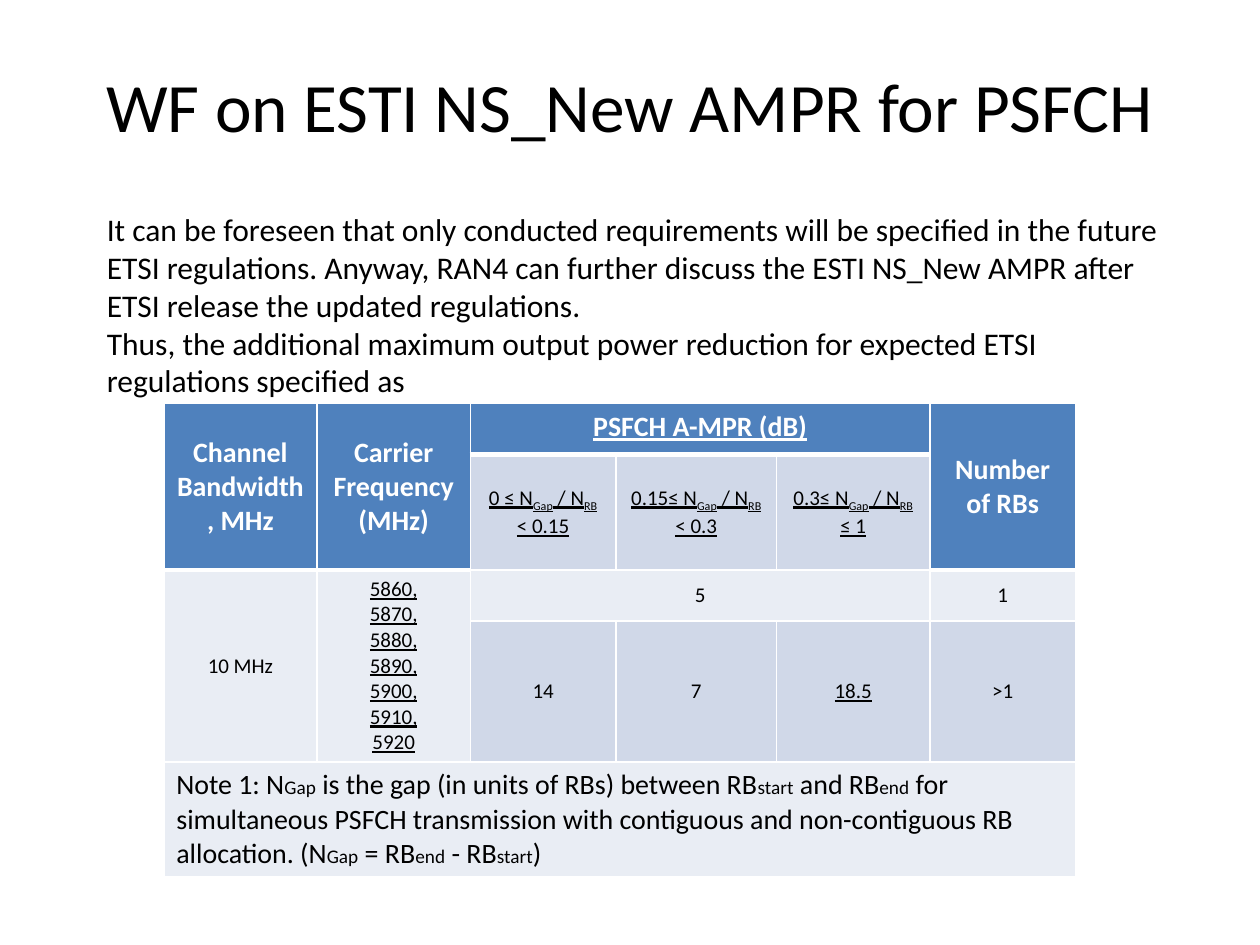
import pptx
import pptx.dml.color
import pptx.enum.text
import pptx.oxml
import pptx.oxml.ns
import pptx.util

Pt = pptx.util.Pt
PP_ALIGN = pptx.enum.text.PP_ALIGN
MIDDLE = pptx.enum.text.MSO_ANCHOR.MIDDLE
TOP = pptx.enum.text.MSO_ANCHOR.TOP
FONT = "Calibri"
COLORS = {
    "text": "000000",
    "white": "FFFFFF",
    "header": "4F81BD",
    "band": "D0D8E8",
    "light": "E9EDF4",
}

TITLE = "WF on ESTI NS_New AMPR for PSFCH"
INTRO = [
    "It can be foreseen that only conducted requirements will be specified in the future "
    "ETSI regulations. Anyway, RAN4 can further discuss the ESTI NS_New AMPR after "
    "ETSI release the updated regulations.",
    "Thus, the additional maximum output power reduction for expected ETSI regulations "
    "specified as",
]
NOTE = (
    "Note 1: N|Gap| is the gap (in units of RBs) between RB|start| and RB|end| for "
    "simultaneous PSFCH transmission with contiguous and non-contiguous RB allocation. "
    "(N|Gap| = RB|end| - RB|start|)"
)
FREQUENCIES = ["5860,", "5870,", "5880,", "5890,", "5900,", "5910,", "5920"]
COLUMN_WIDTHS = [87.6, 87.6, 83.2, 91.8, 87.6, 83.2]
ROW_HEIGHTS = [29.2, 65.8, 29.2, 80.2, 65.6]

HEADER = {"fill": "header", "color": "white", "size": 16, "bold": True, "rule": 3}
BAND = {"fill": "band"}
LIGHT = {"fill": "light"}
UNDERLINED = {"underline": True}

CELLS = [
    (0, 0, 2, 1, ["Channel Bandwidth, MHz"], HEADER),
    (0, 1, 2, 1, ["Carrier Frequency (MHz)"], HEADER),
    (0, 2, 1, 3, ["PSFCH A-MPR (dB)"], HEADER | UNDERLINED | {"anchor": TOP}),
    (0, 5, 2, 1, ["Number of RBs"], HEADER),
    (1, 2, 1, 1, ["0 ≤ N|Gap| / N|RB| < 0.15"], BAND | UNDERLINED),
    (1, 3, 1, 1, ["0.15≤ N|Gap| / N|RB| < 0.3"], BAND | UNDERLINED),
    (1, 4, 1, 1, ["0.3≤ N|Gap| / N|RB| ≤ 1"], BAND | UNDERLINED),
    (2, 0, 2, 1, ["10 MHz"], LIGHT),
    (2, 1, 2, 1, FREQUENCIES, LIGHT | UNDERLINED),
    (2, 2, 1, 3, ["5"], LIGHT),
    (2, 5, 1, 1, ["1"], LIGHT),
    (3, 2, 1, 1, ["14"], BAND),
    (3, 3, 1, 1, ["7"], BAND),
    (3, 4, 1, 1, ["18.5"], BAND | UNDERLINED),
    (3, 5, 1, 1, [">1"], BAND),
    (4, 0, 1, 6, [NOTE], LIGHT | {"size": 16, "small": 11, "align": PP_ALIGN.LEFT}),
]


def rgb(name):
    """Return the named colour."""
    return pptx.dml.color.RGBColor.from_string(COLORS[name])


def format_paragraph(paragraph, size, color="text", bold=False, underline=False,
                     align=PP_ALIGN.LEFT):
    """Set the alignment and the shared font of a paragraph."""
    paragraph.alignment = align
    font = paragraph.font
    font.name, font.size, font.bold, font.underline = FONT, Pt(size), bold, underline
    font.color.rgb = rgb(color)


def write_lines(frame, lines, small=None, **style):
    """Write paragraphs whose odd |-separated parts are subscripts or small text."""
    for index, line in enumerate(lines):
        paragraph = frame.add_paragraph() if index else frame.paragraphs[0]
        format_paragraph(paragraph, **style)
        for position, part in enumerate(line.split("|")):
            run = paragraph.add_run()
            run.text = part
            if position % 2 and small:
                run.font.size = Pt(small)
            elif position % 2:
                run.font._element.set("baseline", "-25000")


def set_borders(cell, bottom):
    """Draw white lines on all four sides of a cell."""
    properties = cell._tc.get_or_add_tcPr()
    for index, (side, width) in enumerate([("L", 1), ("R", 1), ("T", 1), ("B", bottom)]):
        line = pptx.oxml.parse_xml(
            f'<a:ln{side} {pptx.oxml.ns.nsdecls("a")} w="{Pt(width)}"><a:solidFill>'
            f'<a:srgbClr val="{COLORS["white"]}"/></a:solidFill></a:ln{side}>'
        )
        properties.insert(index, line)


def fill_region(table, row, column, height, width, lines, fill, rule=1, anchor=MIDDLE,
                size=12, align=PP_ALIGN.CENTER, **style):
    """Merge, colour and write one region of the table."""
    origin = table.cell(row, column)
    if height * width > 1:
        origin.merge(table.cell(row + height - 1, column + width - 1))
    for r in range(row, row + height):
        for c in range(column, column + width):
            cell = table.cell(r, c)
            cell.fill.solid()
            cell.fill.fore_color.rgb = rgb(fill)
            set_borders(cell, rule)
    origin.vertical_anchor = anchor
    write_lines(origin.text_frame, lines, size=size, align=align, **style)


def place_title(slide, left, top, width, height):
    """Place the slide title in its placeholder."""
    title = slide.shapes.title
    title.left, title.top, title.width, title.height = map(Pt, (left, top, width, height))
    title.text_frame.vertical_anchor = MIDDLE
    write_lines(title.text_frame, [TITLE], size=39.6, align=PP_ALIGN.CENTER)


def place_power_table(slide, left, top):
    """Place the power reduction table with its note."""
    frame = slide.shapes.add_table(
        len(ROW_HEIGHTS), len(COLUMN_WIDTHS), Pt(left), Pt(top),
        Pt(sum(COLUMN_WIDTHS)), Pt(sum(ROW_HEIGHTS)),
    )
    table = frame.table
    table.first_row = table.horz_banding = False
    for column, width in zip(table.columns, COLUMN_WIDTHS):
        column.width = Pt(width)
    for row, height in zip(table.rows, ROW_HEIGHTS):
        row.height = Pt(height)
    for row, column, height, width, lines, style in CELLS:
        fill_region(table, row, column, height, width, lines, **style)


def place_intro(slide, left, top, width, height):
    """Place the introductory text above the table."""
    intro = slide.shapes.add_textbox(*map(Pt, (left, top, width, height))).text_frame
    intro.word_wrap = True
    intro.auto_size = pptx.enum.text.MSO_AUTO_SIZE.SHAPE_TO_FIT_TEXT
    write_lines(intro, INTRO, size=18)


def main():
    """Build and save the slide."""
    deck = pptx.Presentation()
    deck.slide_width, deck.slide_height = Pt(720), Pt(540)
    slide = deck.slides.add_slide(deck.slide_layouts[5])
    place_title(slide, 36, 15, 648, 90)
    place_power_table(slide, 93.6, 230.6)
    place_intro(slide, 54, 116.6, 620, 116.6)
    deck.save("out.pptx")


if __name__ == "__main__":
    main()
